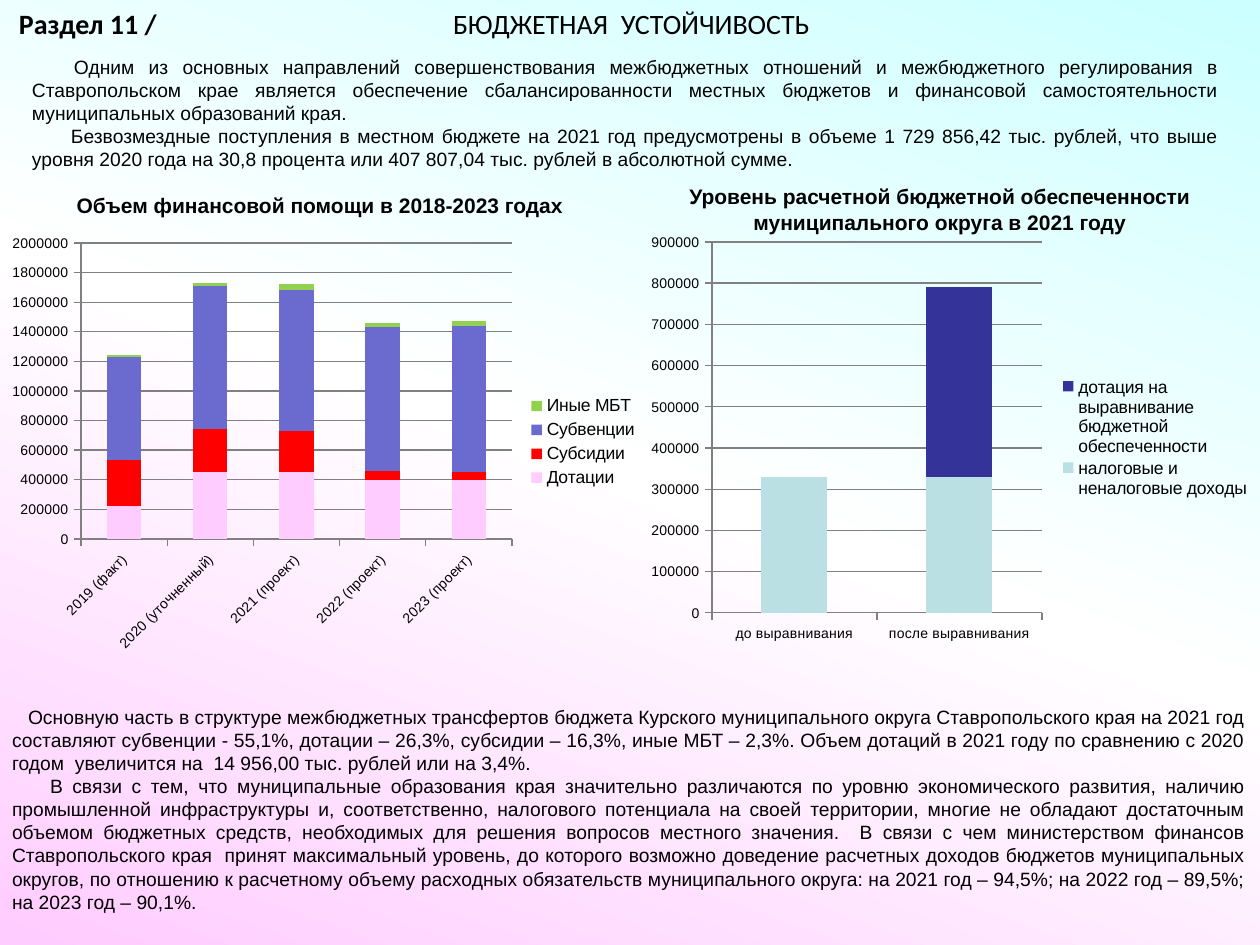
from copy import deepcopy

from lxml.etree import SubElement
from pptx import Presentation
from pptx.chart.data import CategoryChartData
from pptx.dml.color import RGBColor
from pptx.enum.chart import XL_CHART_TYPE, XL_LEGEND_POSITION, XL_TICK_MARK
from pptx.enum.text import MSO_ANCHOR, PP_ALIGN
from pptx.oxml.ns import qn
from pptx.util import Pt

PX = 914400 // 126
SLIDE_SIZE = (1260, 945)
INSET = {"margin_left": 12, "margin_right": 12, "margin_top": 6, "margin_bottom": 6}

THEME = {
    "heading_font": "Calibri", "body_font": "Arial",
    "heading_size": 16, "body_size": 11, "caption_size": 12,
    "axis_size": 8, "legend_size": 10,
    "text": "000000", "grid": "808080",
    "background": [(0, "CCFFFF"), (50, "FFFFFF"), (100, "FFCCFF")],
    "background_angle": 250,
}

SECTION, TOPIC = "Раздел 11 /", "БЮДЖЕТНАЯ  УСТОЙЧИВОСТЬ"
HEADING_BOX = (0, 0, 1260, 47)
HEADING_LEFT, TOPIC_LEFT = 19, 453

# Box, then paragraphs as (first-line indent, text)
PASSAGES = [
    ((20, 49, 1211, 130), [
        (42, "Одним из основных направлений совершенствования межбюджетных отношений и "
             "межбюджетного регулирования в Ставропольском крае является обеспечение "
             "сбалансированности местных бюджетов и финансовой самостоятельности "
             "муниципальных образований края."),
        (39, "Безвозмездные поступления в местном бюджете на 2021 год предусмотрены в объеме "
             "1 729 856,42 тыс. рублей, что выше уровня 2020 года на 30,8 процента или "
             "407 807,04 тыс. рублей в абсолютной сумме."),
    ]),
    ((0, 699, 1258, 246), [
        (16, "Основную часть в структуре межбюджетных трансфертов бюджета Курского "
             "муниципального округа Ставропольского края на 2021 год составляют субвенции - "
             "55,1%, дотации – 26,3%, субсидии – 16,3%, иные МБТ – 2,3%. Объем дотаций в 2021 "
             "году по сравнению с 2020 годом  увеличится на  14 956,00 тыс. рублей или на 3,4%."),
        (38, "В связи с тем, что муниципальные образования края значительно различаются по "
             "уровню экономического развития, наличию промышленной инфраструктуры и, "
             "соответственно, налогового потенциала на своей территории, многие не обладают "
             "достаточным объемом бюджетных средств, необходимых для решения вопросов местного "
             "значения.  В связи с чем министерством финансов Ставропольского края  принят "
             "максимальный уровень, до которого возможно доведение расчетных доходов бюджетов "
             "муниципальных округов, по отношению к расчетному объему расходных обязательств "
             "муниципального округа: на 2021 год – 94,5%; на 2022 год – 89,5%; "
             "на 2023 год – 90,1%."),
    ]),
]

CHARTS = [
    {
        "caption": "Объем финансовой помощи в 2018-2023 годах",
        "caption_box": (0, 187, 640, 38),
        "frame": (0, 227, 650, 433),
        "plot": (81, 243, 431, 296),
        "legend": (526, 392, 114, 100),
        "scale": (2000000, 200000),
        "label_angle": -45,
        "categories": ["2019 (факт)", "2020 (уточненный)", "2021 (проект)",
                       "2022 (проект)", "2023 (проект)"],
        "series": [
            ("Дотации", "FFCCFF", [220000, 450000, 450000, 400000, 400000]),
            ("Субсидии", "FF0000", [310000, 290000, 280000, 60000, 50000]),
            ("Субвенции", "6B6BCF", [700000, 970000, 950000, 970000, 990000]),
            ("Иные МБТ", "92D050", [10000, 20000, 40000, 30000, 30000]),
        ],
    },
    {
        "caption": "Уровень расчетной бюджетной обеспеченности муниципального округа в 2021 году",
        "caption_box": (620, 178, 640, 63),
        "frame": (640, 227, 620, 423),
        "plot": (712, 242, 330, 371),
        "legend": (1056, 375, 198, 126),
        "scale": (900000, 100000),
        "label_angle": 0,
        "categories": ["до выравнивания", "после выравнивания"],
        "series": [
            ("налоговые и неналоговые доходы", "BBE0E3", [330000, 330000]),
            ("дотация на выравнивание бюджетной обеспеченности", "333399", [None, 460000]),
        ],
    },
]


def emu(lengths):
    return [length * PX for length in lengths]


def set_format(target, **values):
    for name, value in values.items():
        setattr(target, name, value)


def style_font(font, size, face="body_font", bold=False):
    set_format(font, name=THEME[face], size=Pt(THEME[size]), bold=bold)
    font.color.rgb = RGBColor.from_string(THEME["text"])


def paint_background(slide):
    fill = slide.background.fill
    fill.gradient()
    fill.gradient_angle = THEME["background_angle"]
    stops = fill.gradient_stops
    first = slide.background._cSld.find(".//" + qn("a:gs"))
    first.addnext(deepcopy(first))
    stops = fill.gradient_stops
    for stop, (percent, color) in zip(stops, THEME["background"]):
        stop.position = percent / 100
        stop.color.rgb = RGBColor.from_string(color)


def add_heading(slide):
    title = slide.shapes.title
    set_format(title, **dict(zip(("left", "top", "width", "height"), emu(HEADING_BOX))))
    frame = title.text_frame
    set_format(frame, word_wrap=True, vertical_anchor=MSO_ANCHOR.MIDDLE,
               margin_left=HEADING_LEFT * PX)
    paragraph = frame.paragraphs[0]
    paragraph.alignment = PP_ALIGN.LEFT
    for text, bold in ((SECTION + "\t", True), (TOPIC, False)):
        run = paragraph.add_run()
        run.text = text
        style_font(run.font, "heading_size", "heading_font", bold)
    tabs = SubElement(paragraph._p.get_or_add_pPr(), qn("a:tabLst"))
    SubElement(tabs, qn("a:tab"), pos=str((TOPIC_LEFT - HEADING_LEFT) * PX), algn="l")


def add_text(slide, box, paragraphs, size, align, bold=False):
    frame = slide.shapes.add_textbox(*emu(box)).text_frame
    set_format(frame, word_wrap=True, **{side: gap * PX for side, gap in INSET.items()})
    for index, (indent, text) in enumerate(paragraphs):
        paragraph = frame.add_paragraph() if index else frame.paragraphs[0]
        paragraph.alignment = align
        run = paragraph.add_run()
        run.text = text
        style_font(run.font, size, bold=bold)
        if indent:
            paragraph._p.get_or_add_pPr().set("indent", str(indent * PX))


def place_part(part, index, box, frame, inner=False):
    """Fix a chart part at a slide position, as fractions of the chart frame."""
    for old in part.findall(qn("c:layout")):
        part.remove(old)
    layout = SubElement(part, qn("c:layout"))
    part.insert(index, layout)
    manual = SubElement(layout, qn("c:manualLayout"))
    left, top, width, height = frame
    values = {"xMode": "edge", "yMode": "edge",
              "x": (box[0] - left) / width, "y": (box[1] - top) / height,
              "w": box[2] / width, "h": box[3] / height}
    if inner:
        values = {"layoutTarget": "inner", **values}
    for name, value in values.items():
        SubElement(manual, qn("c:" + name), val=str(value))


def add_stacked_chart(slide, content):
    data = CategoryChartData(number_format="General")
    data.categories = content["categories"]
    for name, _, values in content["series"]:
        data.add_series(name, values)
    chart = slide.shapes.add_chart(
        XL_CHART_TYPE.COLUMN_STACKED, *emu(content["frame"]), data).chart
    set_format(chart, has_title=False, has_legend=True)
    style_font(chart.font, "axis_size")

    plot = chart.plots[0]
    set_format(plot, gap_width=150, overlap=100, vary_by_categories=False)
    for series, (_, color, _) in zip(plot.series, content["series"]):
        series.format.fill.solid()
        series.format.fill.fore_color.rgb = RGBColor.from_string(color)

    grid = RGBColor.from_string(THEME["grid"])
    for axis in (chart.category_axis, chart.value_axis):
        axis.major_tick_mark = XL_TICK_MARK.OUTSIDE
        axis.format.line.color.rgb = grid
        style_font(axis.tick_labels.font, "axis_size")
    maximum, step = content["scale"]
    set_format(chart.value_axis, minimum_scale=0, maximum_scale=maximum,
               major_unit=step, has_major_gridlines=True)
    chart.value_axis.major_gridlines.format.line.color.rgb = grid
    label_body = chart.category_axis._element.find(qn("c:txPr")).find(qn("a:bodyPr"))
    label_body.set("rot", str(content["label_angle"] * 60000))

    legend = chart.legend
    set_format(legend, position=XL_LEGEND_POSITION.RIGHT, include_in_layout=False)
    style_font(legend.font, "legend_size")
    place_part(legend._element, 1, content["legend"], content["frame"])
    plot_area = chart._chartSpace.find(".//" + qn("c:plotArea"))
    place_part(plot_area, 0, content["plot"], content["frame"], inner=True)


def main():
    deck = Presentation()
    deck.slide_width, deck.slide_height = emu(SLIDE_SIZE)
    slide = deck.slides.add_slide(deck.slide_layouts[5])
    paint_background(slide)
    add_heading(slide)
    for box, paragraphs in PASSAGES:
        add_text(slide, box, paragraphs, "body_size", PP_ALIGN.JUSTIFY)
    for content in CHARTS:
        add_stacked_chart(slide, content)
        add_text(slide, content["caption_box"], [(0, content["caption"])],
                 "caption_size", PP_ALIGN.CENTER, bold=True)
    deck.save("out.pptx")


if __name__ == "__main__":
    main()
